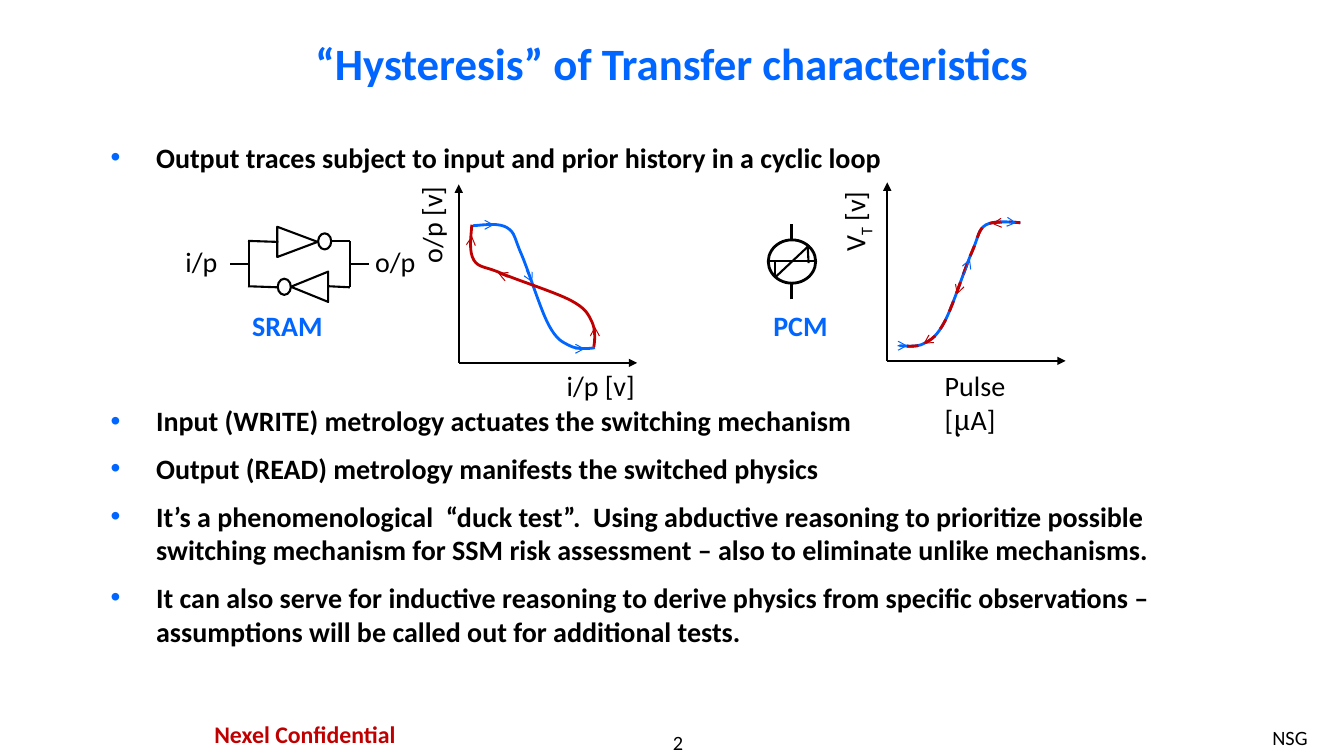
"""Build a slide comparing hysteresis of SRAM and PCM transfer characteristics."""
from lxml.etree import SubElement
from pptx import Presentation
from pptx.dml.color import RGBColor
from pptx.enum.dml import MSO_LINE
from pptx.enum.shapes import MSO_CONNECTOR, MSO_SHAPE
from pptx.enum.text import MSO_ANCHOR, PP_ALIGN
from pptx.oxml.ns import qn
from pptx.util import Inches, Pt

COLORS = {"blue": "0066FF", "red": "C00000", "black": "000000"}

deck = Presentation()
deck.slide_width, deck.slide_height = Inches(13.33), Inches(7.5)
page = deck.slides.add_slide(deck.slide_layouts[6])


def write_text(text, left, top, width, height, size=20, color="black", bold=False,
               align=PP_ALIGN.LEFT, wrap=False, rotation=0):
    """Add a one-paragraph text box without margins and return its paragraph."""
    box = page.shapes.add_textbox(Inches(left), Inches(top), Inches(width), Inches(height))
    box.rotation = rotation
    frame = box.text_frame
    frame.margin_left = frame.margin_right = frame.margin_top = frame.margin_bottom = 0
    frame.word_wrap = wrap
    frame.vertical_anchor = MSO_ANCHOR.MIDDLE if height > 0.8 else MSO_ANCHOR.TOP
    para = frame.paragraphs[0]
    para.text = text
    para.alignment = align
    para.font.name, para.font.size, para.font.bold = "Calibri", Pt(size), bold
    para.font.color.rgb = RGBColor.from_string(COLORS[color])
    return para


def draw_line(x1, y1, x2, y2, color="black", width=1.5, arrow=None):
    """Add a straight line, with an arrowhead at its end if one is named."""
    line = page.shapes.add_connector(MSO_CONNECTOR.STRAIGHT, Inches(x1), Inches(y1),
                                     Inches(x2), Inches(y2))
    line.line.color.rgb = RGBColor.from_string(COLORS[color])
    line.line.width = Pt(width)
    if arrow:
        SubElement(line.line._get_or_add_ln(), qn("a:tailEnd"), type=arrow)
    SubElement(line._element.spPr, qn("a:effectLst"))


write_text("“Hysteresis” of Transfer characteristics", 1, 0.16, 11.33, 0.92, 32, "blue",
           True, PP_ALIGN.CENTER, True)
write_text("2", 5.56, 7.24, 2.33, 0.24, 14.5, align=PP_ALIGN.CENTER)
write_text("NSG", 12.62, 7.19, 0.5, 0.25, 14.5)
write_text("Nexel Confidential", 1.55, 7.14, 2.95, 0.29, 17, "red", True, PP_ALIGN.CENTER)

BULLETS = [
    ("Output traces subject to input and prior history in a cyclic loop", 0),
    ("Input (WRITE) metrology actuates the switching mechanism", 164.5),
    ("Output (READ) metrology manifests the switched physics", 10),
    ("It’s a phenomenological  “duck test”.  Using abductive reasoning to prioritize possible "
     "switching mechanism for SSM risk assessment – also to eliminate unlike mechanisms.", 10),
    ("It can also serve for inductive reasoning to derive physics from specific observations – "
     "assumptions will be called out for additional tests.", 10),
]
body = page.shapes.add_textbox(Inches(1), Inches(1.34), Inches(11.33), Inches(5.33)).text_frame
body.word_wrap = True
for index, (text, space) in enumerate(BULLETS):
    para = body.paragraphs[0] if index == 0 else body.add_paragraph()
    para.text = text
    para.space_before = Pt(space)
    props = para._p.get_or_add_pPr()
    props.set("marL", str(Inches(0.45)))
    props.set("indent", str(Inches(-0.45)))
    SubElement(SubElement(props, qn("a:buClr")), qn("a:srgbClr"), val=COLORS["blue"])
    SubElement(props, qn("a:buFont"), typeface="Arial")
    SubElement(props, qn("a:buChar"), char="•")
    para.font.name, para.font.size, para.font.bold = "Calibri", Pt(20), True
    para.font.color.rgb = RGBColor.from_string(COLORS["black"])

for device, left in [("SRAM", 2.5), ("PCM", 7.67)]:
    write_text(device, left, 3.06, 0.8, 0.34, color="blue", bold=True)
for label, left, top, width, rotation in [
    ("i/p", 1.84, 2.43, 0.4, 0), ("o/p", 3.72, 2.43, 0.5, 0),
    ("i/p [v]", 5.62, 3.66, 0.8, 0), ("o/p [v]", 3.9, 2.06, 0.76, 270),
]:
    write_text(label, left, top, width, 0.34, rotation=rotation)

pulse_label = write_text("Pulse [", 9.37, 3.66, 0.8, 0.68, wrap=True)
micro = pulse_label.add_run()
micro.text, micro.font.name = "μ", "Cambria"
pulse_label.add_run().text = "A]"
threshold_label = write_text("V", 8.17, 2.02, 0.61, 0.34, rotation=270)
subscript = threshold_label.add_run()
subscript.text = "T"
subscript.font._element.set("baseline", "-25000")
threshold_label.add_run().text = " [v]"

for x, y in [(4.55, 3.6), (8.8, 3.58)]:
    draw_line(x, y, x, y - 1.77, arrow="triangle")
    draw_line(x, y, x + 1.77, y, arrow="triangle")

PCM_CURVE = [
    (10.12, 2.21), (9.99, 2.2), (9.86, 2.19), (9.78, 2.23), (9.7, 2.28), (9.71, 2.34),
    (9.64, 2.5), (9.57, 2.66), (9.45, 3.04), (9.37, 3.19), (9.29, 3.34), (9.24, 3.37),
    (9.16, 3.41), (9.09, 3.45), (8.96, 3.43), (8.92, 3.43),
]
CURVES = [
    ("blue", None, [
        (4.69, 2.24), (4.82, 2.23), (4.95, 2.21), (5.03, 2.26), (5.11, 2.31), (5.1, 2.36),
        (5.17, 2.52), (5.24, 2.68), (5.36, 3.07), (5.44, 3.22), (5.52, 3.37), (5.57, 3.39),
        (5.65, 3.43), (5.72, 3.47), (5.85, 3.46), (5.9, 3.45)]),
    ("red", None, [
        (4.68, 2.23), (4.67, 2.36), (4.65, 2.5), (4.7, 2.58), (4.75, 2.66), (4.81, 2.64),
        (4.97, 2.71), (5.13, 2.78), (5.51, 2.9), (5.66, 2.98), (5.81, 3.06), (5.83, 3.11),
        (5.87, 3.19), (5.91, 3.27), (5.9, 3.39), (5.89, 3.44)]),
    ("blue", None, PCM_CURVE),
    ("red", MSO_LINE.DASH, PCM_CURVE),
]
for color, dash, controls in CURVES:
    points = [(Inches(x), Inches(y)) for x, y in controls]
    builder = page.shapes.build_freeform(*points[0])
    builder.add_line_segments(points[1:], close=False)
    curve = builder.convert_to_shape()
    outline = curve._element.find(".//" + qn("a:path"))
    corners = outline.findall(qn("a:lnTo"))
    for start in range(0, len(corners), 3):
        bezier = SubElement(outline, qn("a:cubicBezTo"))
        for corner in corners[start:start + 3]:
            bezier.append(corner[0])
            outline.remove(corner)
    curve.shadow.inherit = False
    curve.fill.background()
    curve.line.color.rgb = RGBColor.from_string(COLORS[color])
    curve.line.width = Pt(2)
    if dash:
        curve.line.dash_style = dash

DIRECTIONS = {
    "blue": [(5.22, 2.68, 5.28, 2.8), (4.8, 2.23, 4.9, 2.23), (5.7, 3.46, 5.8, 3.46),
             (9.53, 2.8, 9.62, 2.57), (9.98, 2.2, 10.08, 2.21), (8.92, 3.43, 9, 3.43)],
    "red": [(5.04, 2.75, 4.94, 2.71), (4.67, 2.44, 4.68, 2.34), (5.9, 3.34, 5.9, 3.24),
            (9.53, 2.8, 9.49, 2.92), (9.94, 2.21, 9.84, 2.22), (9.27, 3.34, 9.16, 3.41)],
}
for color, arrows in DIRECTIONS.items():
    for ends in arrows:
        draw_line(*ends, color, 0.75, "arrow")

for kind, left, top, width, height, rotation, weight in [
    (MSO_SHAPE.ISOSCELES_TRIANGLE, 2.8, 2.2, 0.3, 0.4, 90, 1.5),
    (MSO_SHAPE.OVAL, 3.14, 2.33, 0.16, 0.13, 90, 1.5),
    (MSO_SHAPE.ISOSCELES_TRIANGLE, 2.92, 2.66, 0.3, 0.37, 270, 1.5),
    (MSO_SHAPE.OVAL, 2.74, 2.78, 0.16, 0.13, 270, 1.5),
    (MSO_SHAPE.OVAL, 7.62, 2.38, 0.47, 0.43, 0, 2),
]:
    symbol = page.shapes.add_shape(kind, Inches(left), Inches(top), Inches(width), Inches(height))
    symbol.rotation = rotation
    symbol.shadow.inherit = False
    symbol.fill.background()
    symbol.line.color.rgb = RGBColor.from_string(COLORS["black"])
    symbol.line.width = Pt(weight)

SRAM_WIRES = [
    (2.76, 2.4, 2.46, 2.39), (3.47, 2.39, 3.28, 2.39), (3.26, 2.84, 3.47, 2.85),
    (2.46, 2.84, 2.75, 2.85), (3.47, 2.85, 3.47, 2.39), (2.47, 2.85, 2.47, 2.39),
    (3.66, 2.62, 3.47, 2.62), (2.47, 2.62, 2.28, 2.62),
]
PCM_WIRES = [
    (7.62, 2.59, 8.09, 2.59), (7.69, 2.75, 8.02, 2.44), (8.02, 2.61, 8.01, 2.43),
    (7.69, 2.75, 7.69, 2.6), (7.85, 2.38, 7.85, 2.22), (7.85, 2.97, 7.85, 2.81),
]
for wire in SRAM_WIRES + PCM_WIRES:
    draw_line(*wire)

deck.save("out.pptx")
